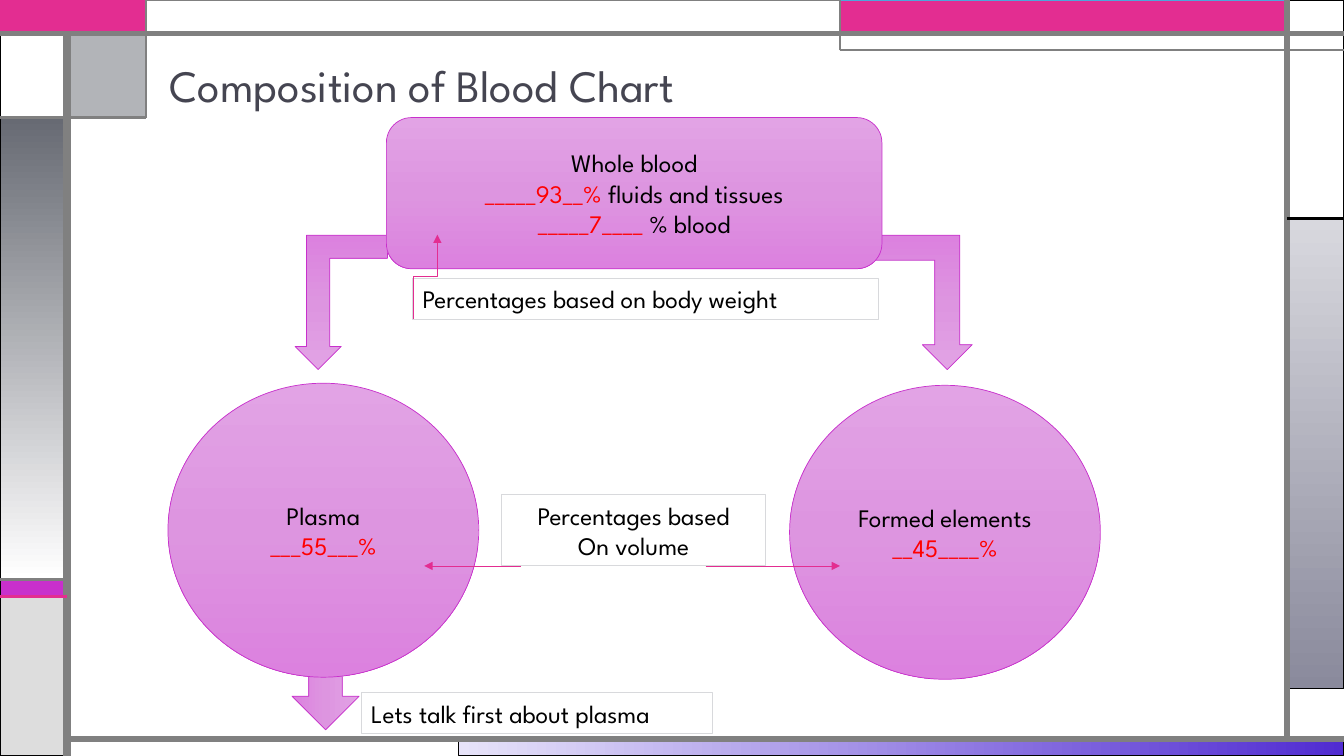
"""Build the blood composition slide with its framed border and flow chart."""
from copy import deepcopy
from dataclasses import dataclass

from lxml.etree import SubElement
from pptx import Presentation
from pptx.dml.color import RGBColor
from pptx.enum.shapes import MSO_CONNECTOR, MSO_SHAPE
from pptx.enum.text import MSO_ANCHOR, MSO_AUTO_SIZE, PP_ALIGN
from pptx.oxml.ns import qn
from pptx.util import Emu, Pt


@dataclass(frozen=True)
class Theme:
    font: str = "League Spartan"
    title_size: int = 32
    body_size: int = 18
    title: str = "454551"
    text: str = "000000"
    answer: str = "FF0000"
    pink: str = "E32D91"
    purple: str = "C830CC"
    blue: str = "4EA6DC"
    slate: str = "676A73"
    rule: str = "808080"
    black: str = "000000"
    white: str = "FFFFFF"
    silver: str = "DDDDDD"
    label_edge: str = "D8D9DC"
    orchid: tuple = ("E2A3E5", "DD95E0", "DC81DF")
    indigo_fade: tuple = ("E7E3F9", "502CD1")
    grey_fade: tuple = ("D8D8DE", "8A8A9C")
    slate_fade: tuple = ("676A73", "FFFFFF")


def px(length):
    return Emu(length * 9525)


def rgb(code):
    return RGBColor.from_string(code)


class ChartSlide:
    def __init__(self, deck, theme):
        self.theme = theme
        self.slide = deck.slides.add_slide(deck.slide_layouts[5])

    def style_run(self, run, size, color):
        run.font.name = self.theme.font
        run.font.size = Pt(size)
        run.font.color.rgb = rgb(color)

    def title(self, wording, box):
        heading = self.slide.shapes.title
        heading.left, heading.top, heading.width, heading.height = map(px, box)
        frame = heading.text_frame
        frame.text = wording
        frame.auto_size = MSO_AUTO_SIZE.NONE
        frame.vertical_anchor = MSO_ANCHOR.BOTTOM
        paragraph = frame.paragraphs[0]
        paragraph.alignment = PP_ALIGN.LEFT
        paragraph.line_spacing = 0.9
        self.style_run(paragraph.runs[0], self.theme.title_size, self.theme.title)

    def gradient(self, shape, colors, angle):
        shape.fill.gradient()
        shape.fill.gradient_angle = (360 - angle) % 360
        stops = shape._element.spPr.find(qn("a:gradFill")).find(qn("a:gsLst"))
        for _ in colors[2:]:
            stops.insert(1, deepcopy(stops[0]))
        for index, stop in enumerate(shape.fill.gradient_stops):
            stop.color.rgb = rgb(colors[index])
            stop.position = index / (len(colors) - 1)

    def block(self, kind, box, fill, edge, weight=0.75, angle=90, alpha=None):
        shape = self.slide.shapes.add_shape(kind, *map(px, box))
        shape.shadow.inherit = False
        if isinstance(fill, tuple):
            self.gradient(shape, fill, angle)
        else:
            shape.fill.solid()
            shape.fill.fore_color.rgb = rgb(fill)
        if alpha:
            tint = shape._element.spPr.find(qn("a:solidFill"))[0]
            SubElement(tint, qn("a:alpha")).set("val", str(alpha * 1000))
        shape.line.color.rgb = rgb(edge)
        shape.line.width = Pt(weight)
        return shape

    def fill_text(self, frame, lines, align):
        frame.word_wrap = True
        frame.vertical_anchor = MSO_ANCHOR.MIDDLE
        for index, parts in enumerate(lines):
            paragraph = frame.add_paragraph() if index else frame.paragraphs[0]
            paragraph.alignment = align
            for wording, color in parts:
                run = paragraph.add_run()
                run.text = wording
                self.style_run(run, self.theme.body_size, color)

    def node(self, kind, box, lines):
        shape = self.block(kind, box, self.theme.orchid, self.theme.purple, 0.5)
        self.fill_text(shape.text_frame, lines, PP_ALIGN.CENTER)

    def flow_arrow(self, kind, box, rotation, mirrored=False):
        arrow = self.block(kind, box, self.theme.orchid, self.theme.purple, 0.5)
        arrow.rotation = rotation
        if mirrored:
            arrow._element.spPr.find(qn("a:xfrm")).set("flipH", "1")

    def label(self, box, lines, align=PP_ALIGN.LEFT):
        note = self.slide.shapes.add_textbox(*map(px, box))
        note.line.color.rgb = rgb(self.theme.label_edge)
        note.line.width = Pt(0.75)
        self.fill_text(note.text_frame, [[(line, self.theme.text)] for line in lines], align)

    def rule(self, ends, color, weight, kind=MSO_CONNECTOR.STRAIGHT):
        line = self.slide.shapes.add_connector(kind, *map(px, ends))
        line.line.color.rgb = rgb(color)
        line.line.width = Pt(weight)
        SubElement(line._element.spPr, qn("a:effectLst"))
        return line

    def pointer(self, ends, kind=MSO_CONNECTOR.STRAIGHT, turn=0):
        properties = self.rule(ends, self.theme.pink, 0.5, kind)._element.spPr
        SubElement(properties.find(qn("a:ln")), qn("a:tailEnd")).set("type", "triangle")
        if turn:
            properties.find(qn("a:xfrm")).set("rot", str(turn * 60000))


def draw_border(page, theme):
    panels = [
        ((437, 704, 843, 16), theme.indigo_fade, theme.black, 0.75, 0),
        ((1226, 208, 54, 448), theme.grey_fade, theme.black),
        ((0, 552, 64, 16), theme.purple, theme.black),
        ((0, 568, 64, 152), theme.silver, theme.black),
        ((1226, 0, 54, 208), theme.white, theme.black),
        ((800, 0, 426, 32), theme.pink, theme.blue),
        ((64, 32, 75, 80), theme.slate, theme.black, 0.75, 90, 50),
        ((0, 112, 64, 440), theme.slate_fade, theme.black),
        ((0, 32, 64, 80), theme.white, theme.black),
        ((0, 0, 139, 32), theme.pink, theme.pink, 1.5),
        ((139, 0, 661, 32), theme.white, theme.rule),
    ]
    for panel in panels:
        page.block(MSO_SHAPE.RECTANGLE, *panel)
    rules = [
        ((64, 720, 64, 32), theme.rule, 6),
        ((64, 704, 1280, 704), theme.rule, 4.5),
        ((1226, 704, 1226, 0), theme.rule, 4.5),
        ((0, 32, 1280, 32), theme.rule, 3),
        ((1280, 48, 800, 48), theme.rule, 1.5),
        ((800, 48, 800, 0), theme.rule, 1.5),
        ((1226, 208, 1280, 208), theme.black, 2.25),
        ((139, 0, 139, 112), theme.rule, 1.5),
        ((139, 112, 0, 112), theme.rule, 2.25),
        ((64, 552, 0, 552), theme.rule, 2.25),
        ((64, 568, 0, 568), theme.pink, 2.25),
    ]
    for rule in rules:
        page.rule(*rule)


def draw_chart(page, theme):
    page.flow_arrow(MSO_SHAPE.RIGHT_ARROW, (272, 625, 76, 64), 90)
    page.flow_arrow(MSO_SHAPE.BENT_UP_ARROW, (281, 224, 88, 128), 180)
    page.flow_arrow(MSO_SHAPE.BENT_UP_ARROW, (831, 224, 95, 128), 180, True)
    page.node(MSO_SHAPE.ROUNDED_RECTANGLE, (368, 112, 472, 144), [
        [("Whole blood", theme.text)],
        [("_____93__% ", theme.answer), ("fluids and tissues", theme.text)],
        [("_____7____ ", theme.answer), ("% blood", theme.text)],
    ])
    page.node(MSO_SHAPE.OVAL, (160, 365, 296, 280), [
        [("Plasma", theme.text)],
        [("___55___%", theme.answer)],
    ])
    page.node(MSO_SHAPE.OVAL, (752, 367, 296, 280), [
        [("Formed elements ", theme.text), ("__45____%", theme.answer)],
    ])
    page.label((393, 265, 444, 39), ["Percentages based on body weight"])
    page.pointer((445, 275, 365, 252), MSO_CONNECTOR.ELBOW, 90)
    page.label((478, 471, 251, 68), ["Percentages based", "On volume"], PP_ALIGN.CENTER)
    page.pointer((672, 539, 800, 539))
    page.pointer((496, 539, 404, 539))
    page.label((344, 660, 335, 39), ["Lets talk first about plasma"])


def main():
    deck = Presentation()
    deck.slide_width, deck.slide_height = px(1280), px(720)
    theme = Theme()
    page = ChartSlide(deck, theme)
    draw_border(page, theme)
    page.title("Composition of Blood Chart", (152, 48, 1016, 64))
    draw_chart(page, theme)
    deck.save("out.pptx")


if __name__ == "__main__":
    main()
